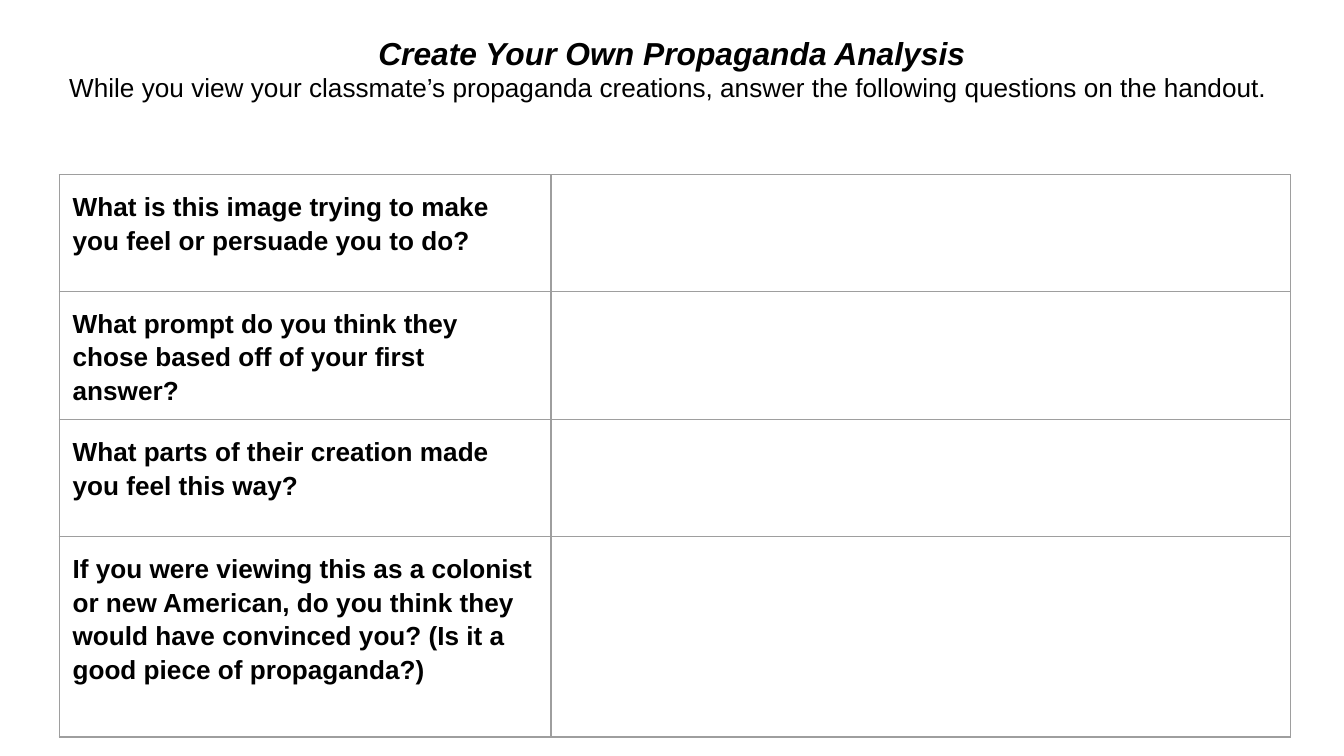
from lxml import etree
from pptx import Presentation
from pptx.dml.color import RGBColor
from pptx.enum.text import MSO_ANCHOR, MSO_AUTO_SIZE, PP_ALIGN
from pptx.oxml.ns import qn
from pptx.util import Inches, Pt

TOP = MSO_ANCHOR.TOP
NO_FIT = MSO_AUTO_SIZE.NONE
CENTER = PP_ALIGN.CENTER

FONT = "Arial"
INK = "000000"
RULE = "9E9E9E"
PAPER = "FFFFFF"
MARGIN = Inches(0.1)
SLIDE_WIDTH = Inches(10)
SLIDE_HEIGHT = SLIDE_WIDTH * 9 // 16

HEADING = "Create Your Own Propaganda Analysis"
INSTRUCTION = (
    "While you view your classmate’s propaganda creations, "
    "answer the following questions on the handout. "
)
QUESTIONS = [
    ("What is this image trying to make you feel or persuade you to do?", 0.87),
    ("What prompt do you think they chose based off of your first answer?", 0.87),
    ("What parts of their creation made you feel this way?", 0.87),
    (
        "If you were viewing this as a colonist or new American, do you think "
        "they would have convinced you? (Is it a good piece of propaganda?)",
        1.49,
    ),
]
COLUMN_WIDTHS = [3.66, 5.5]


def color(hex_value):
    return RGBColor.from_string(hex_value)


def format_text(paragraph, size, bold, italic=False):
    for run in paragraph.runs:
        run.font.name = FONT
        run.font.size = Pt(size)
        run.font.bold = bold
        run.font.italic = italic
        run.font.color.rgb = color(INK)


def set_margins(box):
    box.margin_left = box.margin_right = MARGIN
    box.margin_top = box.margin_bottom = MARGIN


def add_borders(cell):
    properties = cell._tc.get_or_add_tcPr()
    for position, side in enumerate(("lnL", "lnR", "lnT", "lnB")):
        line = etree.Element(qn(f"a:{side}"), w=str(Pt(0.75)))
        fill = etree.SubElement(line, qn("a:solidFill"))
        etree.SubElement(fill, qn("a:srgbClr"), val=RULE)
        properties.insert(position, line)


def place_heading(slide, left, top, width, height):
    title = slide.shapes.title
    title.left, title.top = Inches(left), Inches(top)
    title.width, title.height = Inches(width), Inches(height)
    frame = title.text_frame
    frame.text = f"{HEADING}\n{INSTRUCTION}"
    frame.word_wrap = True
    frame.auto_size = NO_FIT
    frame.vertical_anchor = TOP
    set_margins(frame)
    heading, instruction = frame.paragraphs
    format_text(heading, 17, True, True)
    format_text(instruction, 14, False)
    for paragraph in frame.paragraphs:
        paragraph.alignment = CENTER
        paragraph.line_spacing = 1.0
        paragraph.space_before = Pt(0)


def place_questions(slide, left, top):
    width = sum(COLUMN_WIDTHS)
    height = sum(row_height for _, row_height in QUESTIONS)
    table = slide.shapes.add_table(
        len(QUESTIONS), len(COLUMN_WIDTHS),
        Inches(left), Inches(top), Inches(width), Inches(height),
    ).table
    table.first_row = False
    table.horz_banding = False
    for column, column_width in zip(table.columns, COLUMN_WIDTHS):
        column.width = Inches(column_width)
    for row, (question, row_height) in zip(table.rows, QUESTIONS):
        row.height = Inches(row_height)
        for cell in row.cells:
            cell.fill.background()
            cell.vertical_anchor = TOP
            set_margins(cell)
            add_borders(cell)
        paragraph = row.cells[0].text_frame.paragraphs[0]
        paragraph.text = question
        paragraph.line_spacing = 1.15
        paragraph.space_after = Pt(16)
        format_text(paragraph, 14, True)


def main():
    presentation = Presentation()
    presentation.slide_width = SLIDE_WIDTH
    presentation.slide_height = SLIDE_HEIGHT
    slide = presentation.slides.add_slide(presentation.slide_layouts[5])
    slide.background.fill.solid()
    slide.background.fill.fore_color.rgb = color(PAPER)
    place_heading(slide, 0.34, 0.15, 9.32, 0.96)
    place_questions(slide, 0.44, 1.3)
    presentation.save("out.pptx")


if __name__ == "__main__":
    main()
